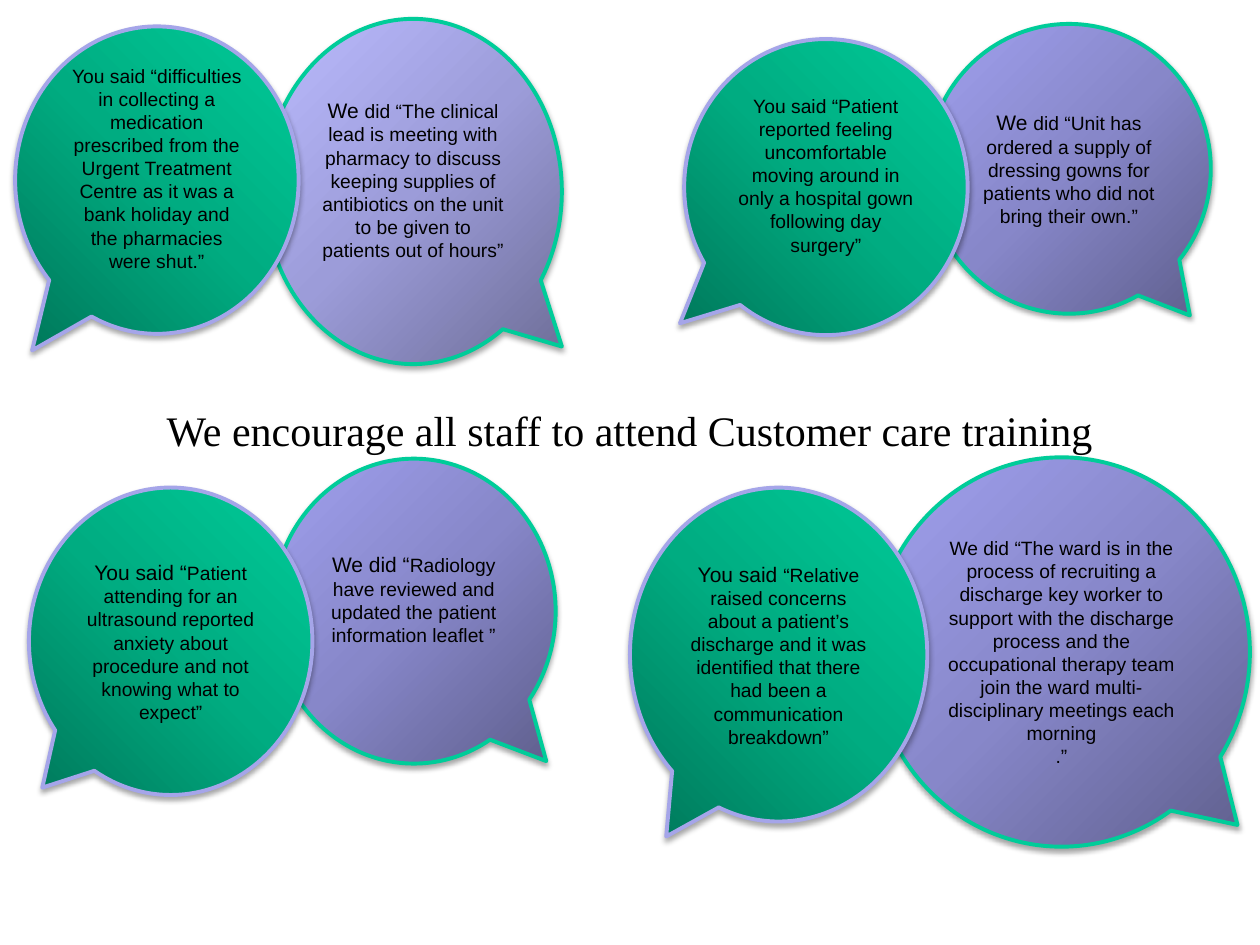
from pptx import Presentation, util as u
from pptx.dml.color import RGBColor
from pptx.enum import shapes, text
from pptx.oxml import parse_xml
from pptx.oxml.ns import nsdecls

Inches = u.Inches
BLACK = "000000"
BLANK_LAYOUT = 6
LAST_LINE_GAP = 0.19  # lifts text by half a line

# Gradient stops run from the dark lower corner outwards
LILAC = {"stops": ("5F5F8D", "8787C9", "A0A0EE"), "line": "00CC99", "focus": 'l="100000" t="100000"'}
PALE_LILAC = {**LILAC, "stops": ("6E6E98", "9C9CD9", "BBBBFF")}
GREEN = {"stops": ("00795B", "00AC81", "00CC99"), "line": "A5A5E9", "focus": 't="100000" r="100000"'}

# Style, (left, top, width, height), tail, extra bottom inset, paragraphs of (text, size)
BUBBLES = [
    (LILAC, (6.93, 3.63, 2.99, 3.09), (0.467, 0.444), 0,
     [[("We did “The ward is in the process of recruiting a discharge key worker to support "
        "with the discharge process and the occupational therapy team join the ward "
        "multi-disciplinary meetings each morning", 11)],
      [(".”", 11)]]),
    (LILAC, (2.16, 3.64, 2.25, 2.42), (0.467, 0.492), LAST_LINE_GAP,
     [[("We did “", 12),
       ("Radiology have reviewed and updated the patient information leaflet ”", 11)]]),
    (GREEN, (0.23, 3.87, 2.25, 2.44), (-0.453, 0.476), 0,
     [[("You said “", 12),
       ("Patient attending for an ultrasound reported anxiety about procedure and "
        "not knowing what to expect”", 11)]]),
    (PALE_LILAC, (2.1, 0.15, 2.36, 2.74), (0.5, 0.449), LAST_LINE_GAP,
     [[("We ", 12),
       ("did “The clinical lead is meeting with pharmacy to discuss keeping supplies of "
        "antibiotics on the unit to be given to patients out of hours”", 11)]]),
    (LILAC, (7.36, 0.19, 2.25, 2.3), (0.426, 0.506), 0,
     [[("We ", 12),
       ("did “Unit has ordered a supply of dressing gowns for patients who did not "
        "bring their own.”", 11)]]),
    (GREEN, (5, 3.87, 2.36, 2.65), (-0.378, 0.545), 0,
     [[("You said ", 12),
       ("“Relative raised concerns about a patient’s discharge and it was identified that "
        "there had been a communication breakdown”", 11)]]),
    (GREEN, (5.43, 0.31, 2.25, 2.35), (-0.515, 0.46), LAST_LINE_GAP,
     [[("You said “Patient reported feeling uncomfortable moving around in only a hospital "
        "gown following day surgery”", 11)]]),
    (GREEN, (0.12, 0.21, 2.25, 2.44), (-0.44, 0.554), LAST_LINE_GAP,
     [[("You said “difficulties in collecting a medication prescribed from the Urgent "
        "Treatment Centre as it was a bank holiday and the pharmacies were shut.”", 11)]]),
]


def color(value):
    return RGBColor.from_string(value)


def set_attributes(target, values):
    for name, value in values.items():
        setattr(target, name, value)


def write_text(frame, paragraphs, font_name):
    """Fill a text frame with centred paragraphs of (text, size) runs."""
    for index, runs in enumerate(paragraphs):
        paragraph = frame.add_paragraph() if index else frame.paragraphs[0]
        paragraph.alignment = text.PP_ALIGN.CENTER
        for wording, size in runs:
            run = paragraph.add_run()
            run.text = wording
            set_attributes(run.font, {"name": font_name, "size": u.Pt(size)})
            run.font.color.rgb = color(BLACK)


def add_radial_fill(shape, style):
    stops = "".join(f'<a:gs pos="{index * 50000}"><a:srgbClr val="{value}"/></a:gs>'
                    for index, value in enumerate(style["stops"]))
    gradient = parse_xml(
        f'<a:gradFill {nsdecls("a")} rotWithShape="1"><a:gsLst>{stops}</a:gsLst>'
        f'<a:path path="circle"><a:fillToRect {style["focus"]}/></a:path></a:gradFill>')
    shape._element.spPr.prstGeom.addnext(gradient)


def add_soft_shadow(shape):
    shape.shadow.inherit = False
    effects = shape._element.spPr.find("{*}effectLst")
    effects.append(parse_xml(
        f'<a:outerShdw {nsdecls("a")} blurRad="{u.Pt(3.1)}" dist="{u.Pt(1.8)}" dir="5400000" '
        f'rotWithShape="0"><a:srgbClr val="{BLACK}"><a:alpha val="35000"/></a:srgbClr>'
        '</a:outerShdw>'))


def add_bubble(slide, style, box, tail, extra_bottom, paragraphs):
    bubble = slide.shapes.add_shape(shapes.MSO_SHAPE.OVAL_CALLOUT, *map(Inches, box))
    for index, offset in enumerate(tail):
        bubble.adjustments[index] = offset
    bubble.line.color.rgb = color(style["line"])
    bubble.line.width = u.Pt(2.25)
    add_radial_fill(bubble, style)
    add_soft_shadow(bubble)
    set_attributes(bubble.text_frame, {
        "word_wrap": True,
        "vertical_anchor": text.MSO_ANCHOR.MIDDLE,
        "margin_bottom": Inches(0.05 + extra_bottom),
    })
    write_text(bubble.text_frame, paragraphs, "Arial")


def add_heading(slide, wording):
    heading = slide.shapes.add_textbox(*map(Inches, (0.75, 3.12, 8.5, 0.5)))
    set_attributes(heading.text_frame, {
        "word_wrap": True,
        "margin_top": Inches(0.09),
        "margin_bottom": Inches(0.03),
    })
    write_text(heading.text_frame, [[(wording, 24)]], "Times New Roman")


def main():
    presentation = Presentation()
    set_attributes(presentation, {"slide_width": Inches(10), "slide_height": Inches(7.5)})
    slide = presentation.slides.add_slide(presentation.slide_layouts[BLANK_LAYOUT])

    # Central message
    add_heading(slide, "We encourage all staff to attend Customer care training")

    # Feedback and response bubbles, back to front
    for bubble in BUBBLES:
        add_bubble(slide, *bubble)

    presentation.save("out.pptx")


if __name__ == "__main__":
    main()
